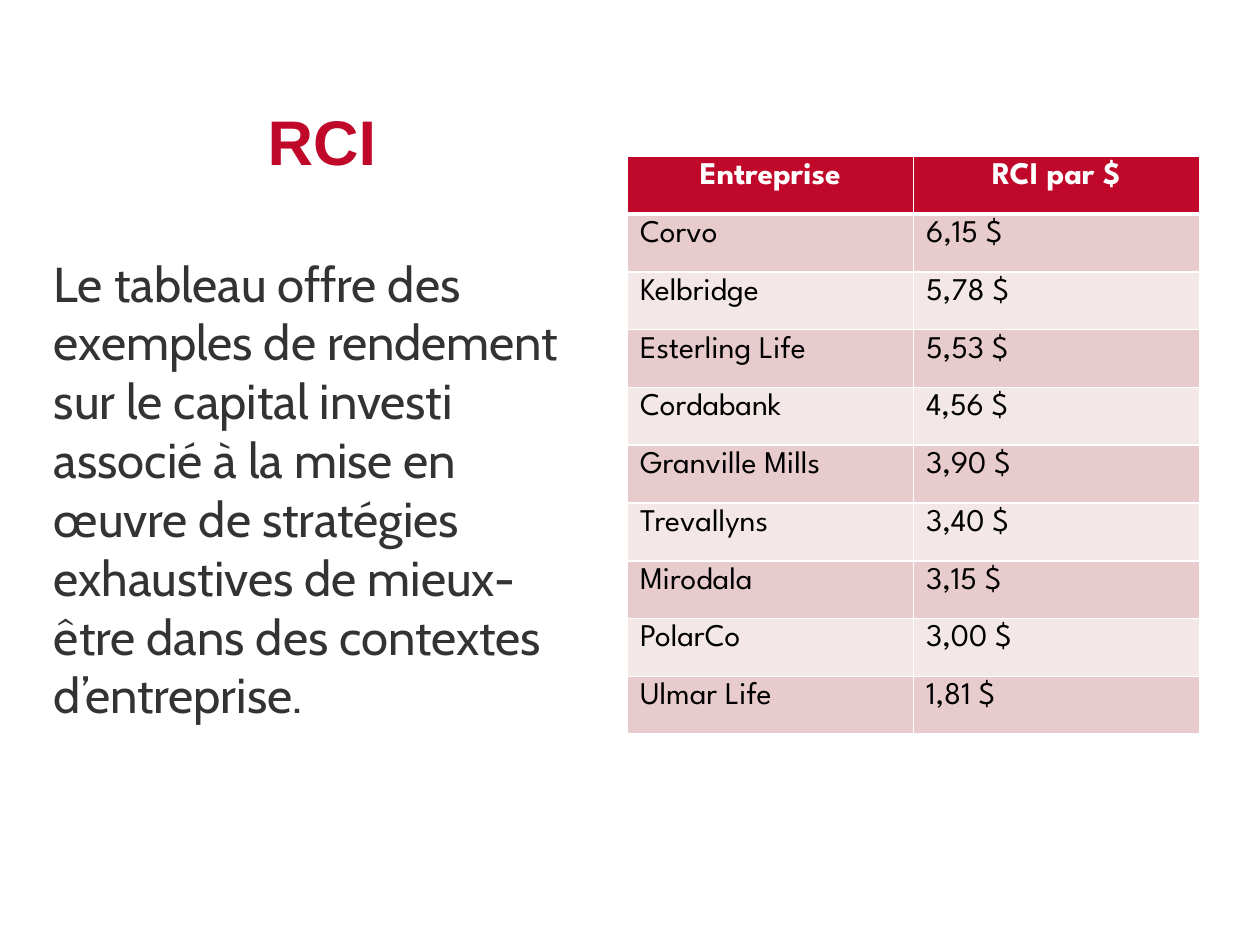
from lxml.etree import SubElement
from pptx import Presentation
from pptx.dml.color import RGBColor
from pptx.enum.text import MSO_ANCHOR as Anchor, PP_ALIGN as Align
from pptx.oxml.ns import qn
from pptx.util import Inches, Pt

RED = RGBColor(0xC0, 0x08, 0x2B)
GREY = RGBColor(0x33, 0x33, 0x33)
BLACK = RGBColor(0, 0, 0)
WHITE = RGBColor(0xFF, 0xFF, 0xFF)
BANDS = (RGBColor(0xE8, 0xCC, 0xCD), RGBColor(0xF4, 0xE7, 0xE8))

WIDTH, HEIGHT = 10, 7.5  # inches; the grid unit is one inch

BODY = (
    "Le tableau offre des exemples de rendement sur le capital investi "
    "associé à la mise en œuvre de stratégies exhaustives de mieux-être "
    "dans des contextes d’entreprise."
)
RETURNS = [
    ("Entreprise", "RCI par $"),
    ("Corvo", "6,15 $"),
    ("Kelbridge", "5,78 $"),
    ("Esterling Life", "5,53 $"),
    ("Cordabank", "4,56 $"),
    ("Granville Mills", "3,90 $"),
    ("Trevallyns", "3,40 $"),
    ("Mirodala", "3,15 $"),
    ("PolarCo", "3,00 $"),
    ("Ulmar Life", "1,81 $"),
]


class SlideBuilder:
    """Holds the table style and the slide being built."""

    table_font = "League Spartan"
    table_size = 18
    rule, header_rule = 1, 3  # points

    def __init__(self, deck):
        self.slide = deck.slides.add_slide(deck.slide_layouts[6])

    def set_text(self, frame, text, font, size, color, bold=False, align=Align.LEFT):
        frame.text = text
        para = frame.paragraphs[0]
        para.alignment = align
        span = para.runs[0].font
        span.name, span.size, span.bold = font, Pt(size), bold
        span.color.rgb = color
        return para

    def text_box(self, place, text, font, size, color, anchor=Anchor.TOP, **style):
        box = self.slide.shapes.add_textbox(*map(Inches, place))
        frame = box.text_frame
        frame.word_wrap = True
        frame.vertical_anchor = anchor
        return self.set_text(frame, text, font, size, color, **style)

    def border(self, cell, side, points):
        line = SubElement(cell._tc.get_or_add_tcPr(), qn(f"a:ln{side}"), w=str(Pt(points)))
        fill = SubElement(line, qn("a:solidFill"))
        SubElement(fill, qn("a:srgbClr"), val=str(WHITE))

    def table(self, place, rows):
        shape = self.slide.shapes.add_table(len(rows), len(rows[0]), *map(Inches, place))
        for row_index, row in enumerate(rows):
            header = row_index == 0
            for column, text in enumerate(row):
                cell = shape.table.cell(row_index, column)
                # Borders come before the fill in the cell properties
                for side in "LRTB":
                    thick = (side == "B" and header) or (side == "T" and row_index == 1)
                    self.border(cell, side, self.header_rule if thick else self.rule)
                cell.fill.solid()
                cell.fill.fore_color.rgb = RED if header else BANDS[(row_index - 1) % 2]
                self.set_text(
                    cell.text_frame, text, self.table_font, self.table_size,
                    WHITE if header else BLACK, bold=header,
                    align=Align.CENTER if header else Align.LEFT,
                )


def main():
    deck = Presentation()
    deck.slide_width, deck.slide_height = Inches(WIDTH), Inches(HEIGHT)
    builder = SlideBuilder(deck)

    # Left column: title and explanation
    left, column_width = 0.33, 4.45
    builder.text_box((left, 0.76, column_width, 0.7), "RCI", "Arial", 36, RED,
                     anchor=Anchor.BOTTOM, bold=True, align=Align.CENTER)
    body = builder.text_box((left, 1.96, column_width, 4.07), BODY, "Cabin", 28, GREY)
    body.space_before = Pt(6)

    # Right column: return per dollar by company
    builder.table((4.98, 1.24, 4.54, 4.59), RETURNS)

    deck.save("out.pptx")


if __name__ == "__main__":
    main()
